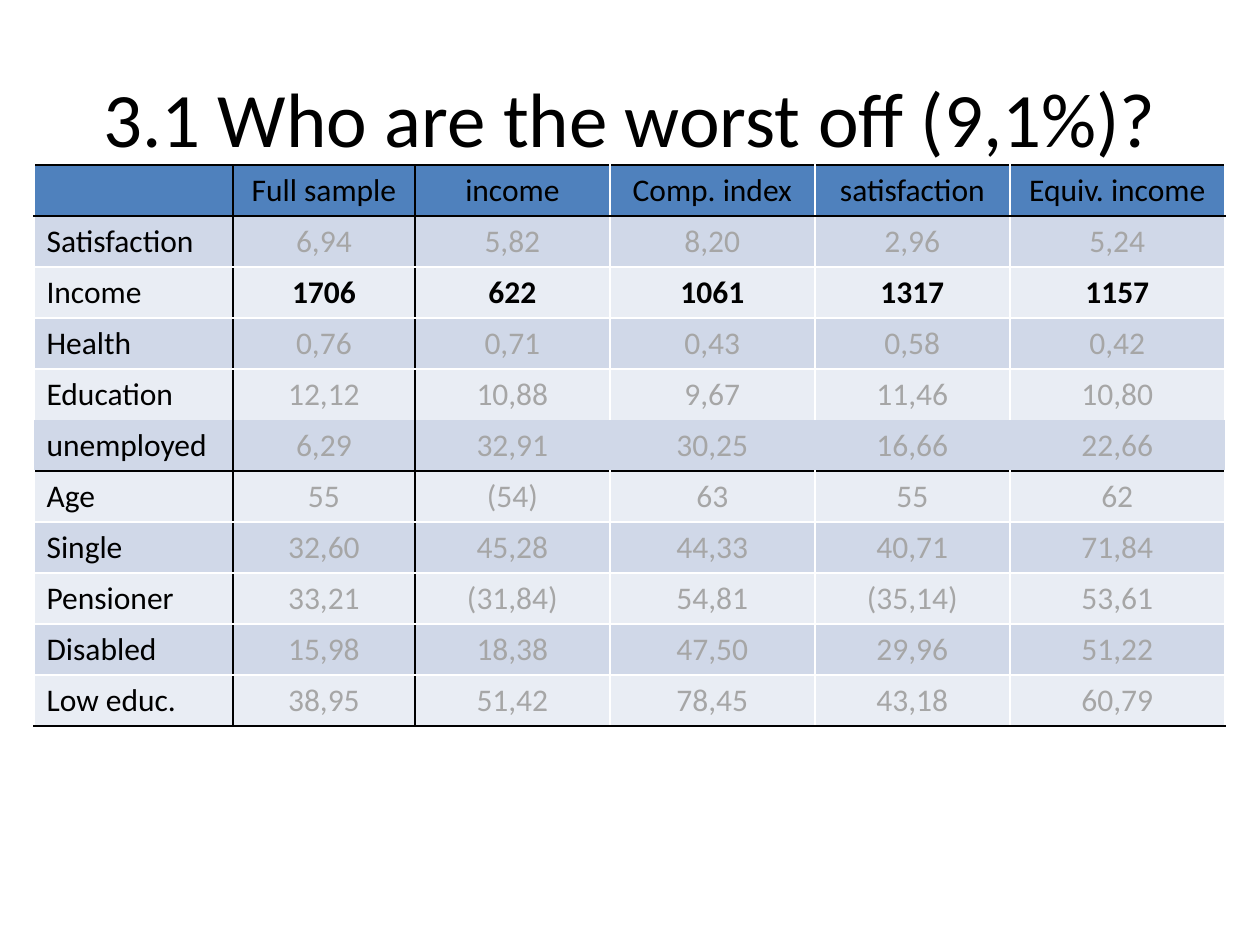
from lxml.etree import SubElement
from pptx import Presentation
from pptx.dml.color import RGBColor as Rgb
from pptx.enum.text import MSO_ANCHOR as Anchor, PP_ALIGN as Align
from pptx.oxml.ns import qn
from pptx.util import Emu, Pt

PX = 914400 // 126
FONT = "Calibri"
COLORS = {
    "ink": "000000", "muted": "A6A6A6", "rule": "FFFFFF",
    "header": "4F81BD", "band": "D0D8E8", "light": "E9EDF4",
}

TITLE = "3.1 Who are the worst off (9,1%)?"
ROWS = [
    ["", "Full sample", "income", "Comp. index", "satisfaction", "Equiv. income"],
    ["Satisfaction", "6,94", "5,82", "8,20", "2,96", "5,24"],
    ["Income", "1706", "622", "1061", "1317", "1157"],
    ["Health", "0,76", "0,71", "0,43", "0,58", "0,42"],
    ["Education", "12,12", "10,88", "9,67", "11,46", "10,80"],
    ["unemployed", "6,29", "32,91", "30,25", "16,66", "22,66"],
    ["Age", "55", "(54)", "63", "55", "62"],
    ["Single", "32,60", "45,28", "44,33", "40,71", "71,84"],
    ["Pensioner", "33,21", "(31,84)", "54,81", "(35,14)", "53,61"],
    ["Disabled", "15,98", "18,38", "47,50", "29,96", "51,22"],
    ["Low educ.", "38,95", "51,42", "78,45", "43,18", "60,79"],
]
COLUMN_WIDTHS = [199, 182, 195, 205, 195, 215]
ROW_HEIGHT = 51
INCOME_ROW, UNEMPLOYED_ROW = 2, 5
DARK_ROW_EDGES = {0, 1, UNEMPLOYED_ROW + 1, len(ROWS)}
DARK_COLUMN_EDGES = {1, 2}


def row_edge(index):
    """Colour of the horizontal rule above row `index`, or None."""
    if index == UNEMPLOYED_ROW:
        return None
    return "ink" if index in DARK_ROW_EDGES else "rule"


def column_edge(index, row):
    """Colour of the vertical rule left of column `index`, or None."""
    if index in DARK_COLUMN_EDGES:
        return "ink"
    return None if row == UNEMPLOYED_ROW else "rule"


class SlideBuilder:
    def __init__(self, slide):
        self.slide = slide

    def text(self, frame, content, size, color="ink", align=Align.CENTER, bold=False):
        paragraph = frame.paragraphs[0]
        paragraph.alignment = align
        if not content:
            paragraph.font.size = Pt(size)
            return
        run = paragraph.add_run()
        run.text = content
        style = {"name": FONT, "size": Pt(size), "bold": bold}
        for attribute, value in style.items():
            setattr(run.font, attribute, value)
        run.font.color.rgb = Rgb.from_string(COLORS[color])

    def title(self, content, left, top, width, height):
        box = self.slide.shapes.add_textbox(*(Emu(n * PX) for n in (left, top, width, height)))
        frame = box.text_frame
        frame.word_wrap = True
        frame.vertical_anchor = Anchor.MIDDLE
        self.text(frame, content, 44)

    def border(self, cell, side, color):
        line = SubElement(cell._tc.get_or_add_tcPr(), qn(f"a:ln{side}"), w=str(Pt(1)))
        if color is None:
            SubElement(line, qn("a:noFill"))
        else:
            fill = SubElement(line, qn("a:solidFill"))
            SubElement(fill, qn("a:srgbClr"), val=COLORS[color])

    def cell(self, cell, content, row, column):
        # Borders come before the fill in the cell properties
        edges = {
            "L": column_edge(column, row), "R": column_edge(column + 1, row),
            "T": row_edge(row), "B": row_edge(row + 1),
        }
        for side, color in edges.items():
            self.border(cell, side, color)
        background = "header" if row == 0 else "band" if row % 2 else "light"
        cell.fill.solid()
        cell.fill.fore_color.rgb = Rgb.from_string(COLORS[background])

        # Labels and the income figures stand out from the muted values
        is_label = row == 0 or column == 0
        highlighted = row == INCOME_ROW and not is_label
        self.text(
            cell.text_frame, content, 18,
            color="ink" if is_label or highlighted else "muted",
            align=Align.LEFT if column == 0 else Align.CENTER,
            bold=highlighted,
        )

    def table(self, rows, left, top, widths, row_height):
        bounds = (left, top, sum(widths), row_height * len(rows))
        grid = self.slide.shapes.add_table(
            len(rows), len(widths), *(Emu(n * PX) for n in bounds)).table
        for column, width in zip(grid.columns, widths):
            column.width = Emu(width * PX)
        for r, values in enumerate(rows):
            for c, content in enumerate(values):
                self.cell(grid.cell(r, c), content, r, c)


def main():
    deck = Presentation()
    deck.slide_width, deck.slide_height = Emu(1260 * PX), Emu(945 * PX)
    builder = SlideBuilder(deck.slides.add_slide(deck.slide_layouts[6]))

    # Heading
    builder.title(TITLE, 63, 38, 1134, 158)
    # Comparison of the worst off under each measure
    builder.table(ROWS, 34, 165, COLUMN_WIDTHS, ROW_HEIGHT)

    deck.save("out.pptx")


if __name__ == "__main__":
    main()
